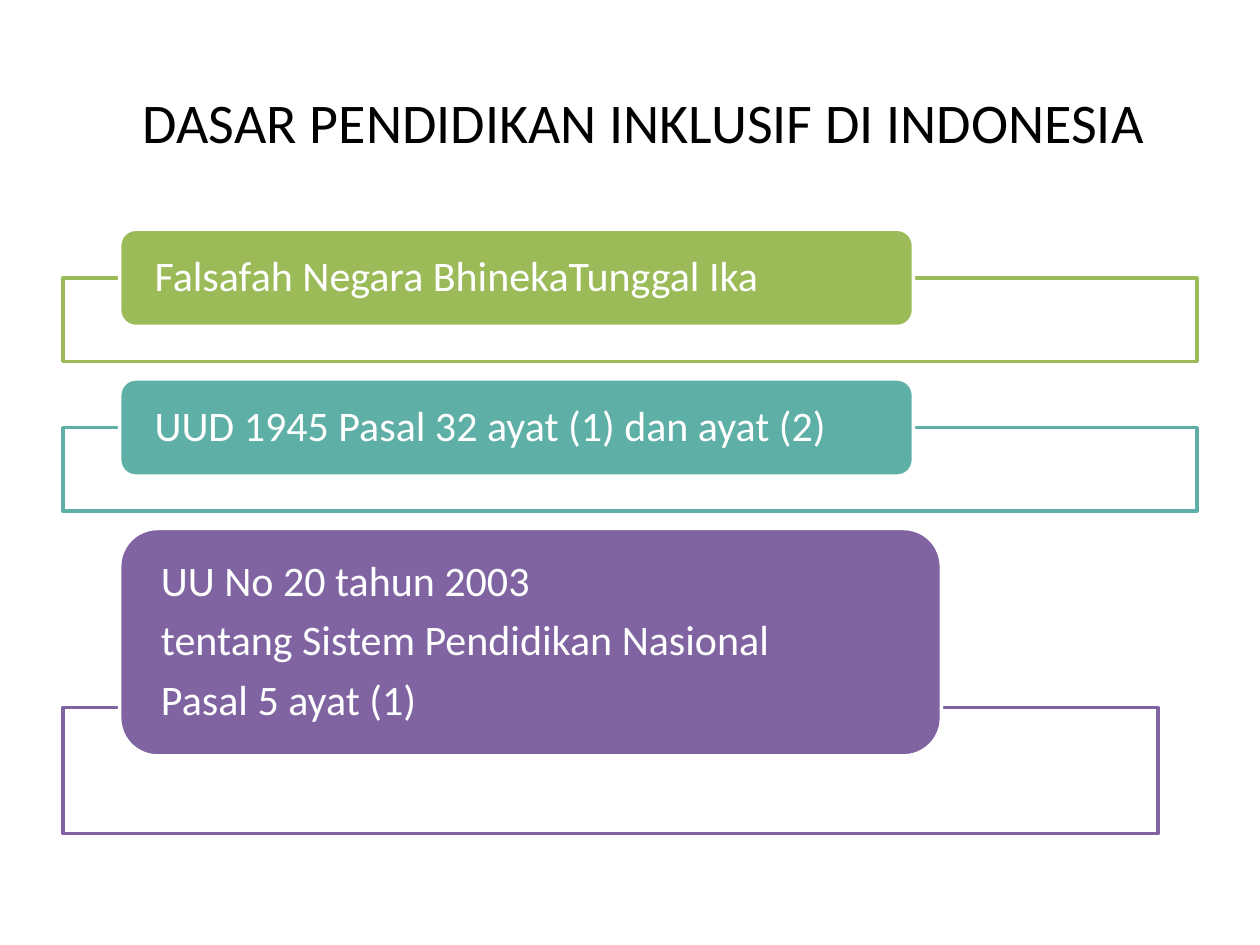
from pptx import Presentation
from pptx.dml.color import RGBColor
from pptx.enum.shapes import MSO_SHAPE
from pptx.enum.text import MSO_ANCHOR, PP_ALIGN
from pptx.util import Pt

RECTANGLE = MSO_SHAPE.RECTANGLE
ROUNDED_RECTANGLE = MSO_SHAPE.ROUNDED_RECTANGLE
MIDDLE = MSO_ANCHOR.MIDDLE
LEFT, CENTER = PP_ALIGN.LEFT, PP_ALIGN.CENTER

FONT = "Calibri"
WHITE = "FFFFFF"
BLACK = "000000"
TITLE_LAYOUT = 5

LIST_LEFT, LIST_TOP, SECTION_GAP = 36, 131, 10
LABEL_INDENT = 32.4  # label's distance from the frame's left side
FRAME_OVERLAP = 27.7  # how far the label reaches down into its frame

# lines, colour, frame width, label width, label height, frame height
SECTIONS = [
    (["Falsafah Negara BhinekaTunggal Ika"], "9BBB59", 648, 453.6, 55.6, 47.6),
    (["UUD 1945 Pasal 32 ayat (1) dan ayat (2)"], "5EAFA6", 648, 453.6, 55.6, 47.6),
    (
        ["UU No 20 tahun 2003", "tentang Sistem Pendidikan Nasional", "Pasal 5 ayat (1)"],
        "8064A2", 625.7, 469.6, 130, 72,
    ),
]


def color(hex_string):
    return RGBColor.from_string(hex_string)


def add_run(paragraph, text, size, hex_string):
    run = paragraph.add_run()
    run.text = text
    run.font.name = FONT
    run.font.size = Pt(size)
    run.font.color.rgb = color(hex_string)


def add_box(slide, kind, left, top, width, height, fill, line):
    shape = slide.shapes.add_shape(kind, Pt(left), Pt(top), Pt(width), Pt(height))
    shape.shadow.inherit = False
    shape.fill.solid()
    shape.fill.fore_color.rgb = color(fill)
    shape.line.color.rgb = color(line)
    shape.line.width = Pt(2)
    return shape


def add_title(slide, text, left, top, width, height):
    title = slide.shapes.title
    title.left, title.top = Pt(left), Pt(top)
    title.width, title.height = Pt(width), Pt(height)
    frame = title.text_frame
    frame.vertical_anchor = MIDDLE
    paragraph = frame.paragraphs[0]
    paragraph.alignment = CENTER
    add_run(paragraph, text, 32, BLACK)


def add_section(slide, left, top, section):
    """Draw a frame with its label on the top edge; return the section's height."""
    lines, accent, frame_width, label_width, label_height, frame_height = section
    frame_offset = label_height - FRAME_OVERLAP
    add_box(slide, RECTANGLE, left, top + frame_offset, frame_width, frame_height,
            WHITE, accent)
    label = add_box(slide, ROUNDED_RECTANGLE, left + LABEL_INDENT, top,
                    label_width, label_height, accent, WHITE)
    text_frame = label.text_frame
    text_frame.word_wrap = True
    text_frame.vertical_anchor = MIDDLE
    text_frame.margin_left = text_frame.margin_right = Pt(17.3)
    text_frame.margin_top = text_frame.margin_bottom = 0
    for index, line in enumerate(lines):
        paragraph = text_frame.add_paragraph() if index else text_frame.paragraphs[0]
        paragraph.alignment = LEFT
        paragraph.line_spacing = 0.9
        paragraph.space_after = Pt(8)
        add_run(paragraph, line, 24, WHITE)
    return frame_offset + frame_height


def main():
    presentation = Presentation()
    presentation.slide_width, presentation.slide_height = Pt(720), Pt(540)
    slide = presentation.slides.add_slide(presentation.slide_layouts[TITLE_LAYOUT])
    add_title(slide, "DASAR PENDIDIKAN INKLUSIF DI INDONESIA", 36, 21.6, 664, 95)
    top = LIST_TOP
    for section in SECTIONS:
        top += add_section(slide, LIST_LEFT, top, section) + SECTION_GAP
    presentation.save("out.pptx")


if __name__ == "__main__":
    main()
